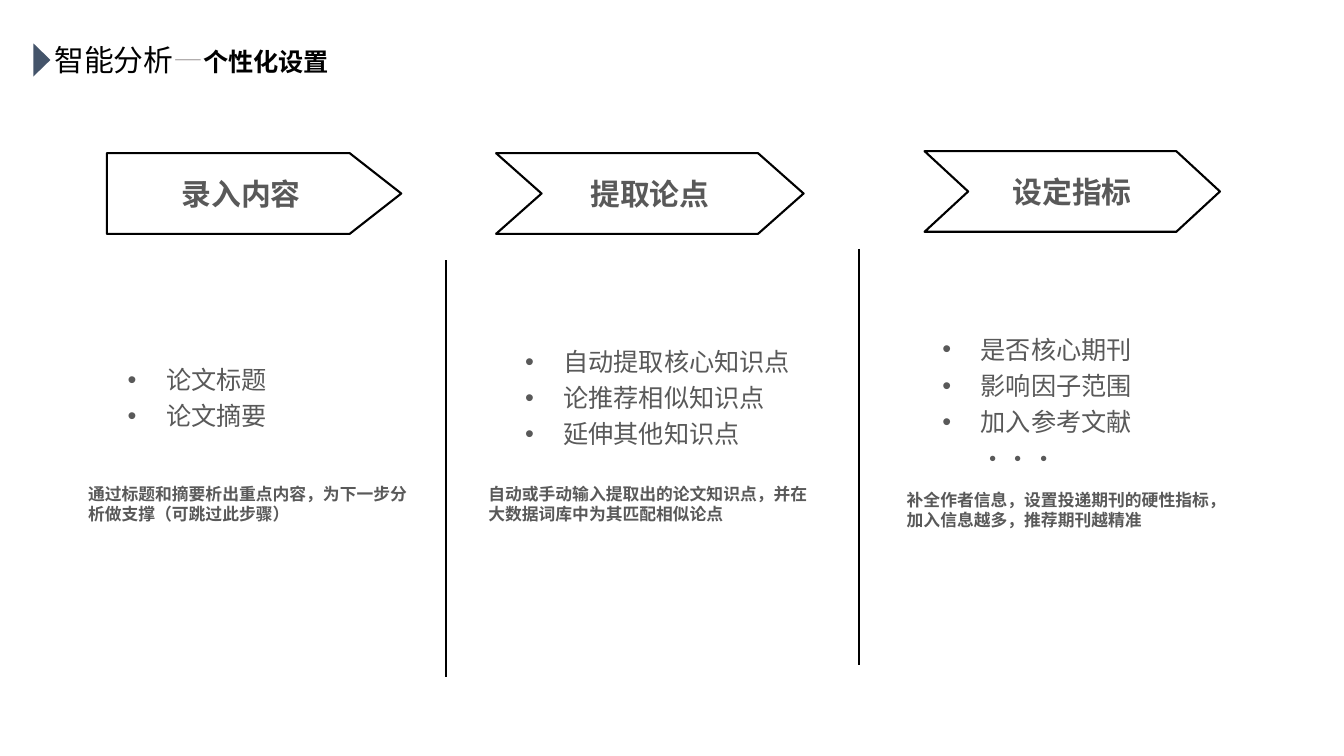
from lxml.etree import SubElement
from pptx import Presentation
from pptx.dml.color import RGBColor
from pptx.enum.shapes import MSO_CONNECTOR, MSO_SHAPE
from pptx.enum.text import MSO_ANCHOR, PP_ALIGN
from pptx.oxml.ns import qn
from pptx.util import Inches, Pt

BLACK = RGBColor(0x00, 0x00, 0x00)
GREY = RGBColor(0x59, 0x59, 0x59)
LIGHT_GREY = RGBColor(0xAF, 0xAB, 0xAB)
SLATE = RGBColor(0x44, 0x54, 0x6A)
LATIN_FONT = "Lato"
CHINESE_FONT = "Noto Sans CJK SC"


def add_text(paragraph, text, size, color=GREY, bold=False, font=CHINESE_FONT,
             align=PP_ALIGN.LEFT, bullet=False):
    paragraph.alignment = align
    if bullet:
        properties = paragraph._p.get_or_add_pPr()
        properties.set("marL", str(Inches(0.38)))
        properties.set("indent", str(Inches(-0.38)))
        SubElement(properties, qn("a:buFont"), typeface="Arial")
        SubElement(properties, qn("a:buChar"), char="•")
        paragraph.line_spacing = 1.2
    for index, line in enumerate(text.split("\n")):
        if index:
            paragraph.add_line_break()
        run = paragraph.add_run()
        run.text = line
        run.font.name = font
        run.font.size = Pt(size)
        run.font.bold = bold
        run.font.color.rgb = color
        SubElement(run._r.get_or_add_rPr(), qn("a:ea"), typeface=CHINESE_FONT)


def add_box(kind, left, top, width, height, adjustment=None):
    shape = slide.shapes.add_shape(
        kind, Inches(left), Inches(top), Inches(width), Inches(height))
    shape.shadow.inherit = False
    shape.fill.background()
    shape.line.fill.background()
    if adjustment is not None:
        shape.adjustments[0] = adjustment
    shape.text_frame.vertical_anchor = MSO_ANCHOR.MIDDLE
    return shape


presentation = Presentation()
presentation.slide_width = Inches(13.33)
presentation.slide_height = Inches(7.5)
slide = presentation.slides.add_slide(presentation.slide_layouts[5])

# Title with its marker
title = slide.shapes.title
title.left, title.top = Inches(0.44), Inches(0.36)
title.width, title.height = Inches(4.67), Inches(0.46)
title.text_frame.vertical_anchor = MSO_ANCHOR.TOP
title.text_frame.word_wrap = True
heading = title.text_frame.paragraphs[0]
add_text(heading, "智能分析", 21.3, BLACK, font=LATIN_FONT)
add_text(heading, "—", 21.3, LIGHT_GREY, font=LATIN_FONT)
add_text(heading, "个性化设置", 18, BLACK, bold=True, font=LATIN_FONT)

marker = add_box(MSO_SHAPE.ISOSCELES_TRIANGLE, 0.25, 0.51, 0.33, 0.17)
marker.rotation = 90
marker.fill.solid()
marker.fill.fore_color.rgb = SLATE

# Three steps: arrow (kind, left, top, width, adjustment), its label,
# list (left, top, width), its items, note (left, top), its text
steps = [
    ((MSO_SHAPE.PENTAGON, 1.06, 1.52, 2.92, 0.639), "录入内容",
     (1.16, 3.29, 2.61), ["论文标题", "论文摘要"],
     (0.77, 4.69), "通过标题和摘要析出重点内容，为下一步分析做支撑（可跳过此步骤）"),
    ((MSO_SHAPE.CHEVRON, 4.92, 1.52, 3.05, 0.564), "提取论点",
     (5.1, 3.29, 2.85), ["自动提取核心知识点", "论推荐相似知识点", "延伸其他知识点"],
     (4.74, 4.69), "自动或手动输入提取出的论文知识点，并在大数据词库中为其匹配相似论点"),
    ((MSO_SHAPE.CHEVRON, 9.17, 1.5, 2.93, 0.541), "设定指标",
     (9.24, 3.35, 2.85), ["是否核心期刊", "影响因子范围", "加入参考文献\n···"],
     (8.89, 4.75), "补全作者信息，设置投递期刊的硬性指标，加入信息越多，推荐期刊越精准"),
]
for arrow_place, label, list_place, items, note_place, note_text in steps:
    kind, left, top, width, adjustment = arrow_place
    arrow = add_box(kind, left, top, width, 0.8, adjustment)
    arrow.line.color.rgb = BLACK
    arrow.line.width = Pt(1.5)
    arrow.text_frame.word_wrap = False
    add_text(arrow.text_frame.paragraphs[0], label, 21.3, bold=True,
             font=LATIN_FONT, align=PP_ALIGN.CENTER)

    frame = add_box(MSO_SHAPE.ROUNDED_RECTANGLE, *list_place, 1.25, 0.024).text_frame
    frame.word_wrap = True
    for index, item in enumerate(items):
        paragraph = frame.add_paragraph() if index else frame.paragraphs[0]
        add_text(paragraph, item, 18, bullet=True)

    note = add_box(MSO_SHAPE.ROUNDED_RECTANGLE, *note_place, 3.39, 0.62, 0.024)
    note.text_frame.word_wrap = True
    add_text(note.text_frame.paragraphs[0], note_text, 12, bold=True)

# Dividers between the steps
for x, top, bottom in [(4.42, 2.58, 6.72), (8.52, 2.47, 6.6)]:
    divider = slide.shapes.add_connector(
        MSO_CONNECTOR.STRAIGHT, Inches(x), Inches(top), Inches(x), Inches(bottom))
    divider.line.color.rgb = BLACK
    divider.line.width = Pt(1.5)
    SubElement(divider._element.spPr, qn("a:effectLst"))

presentation.save("out.pptx")
